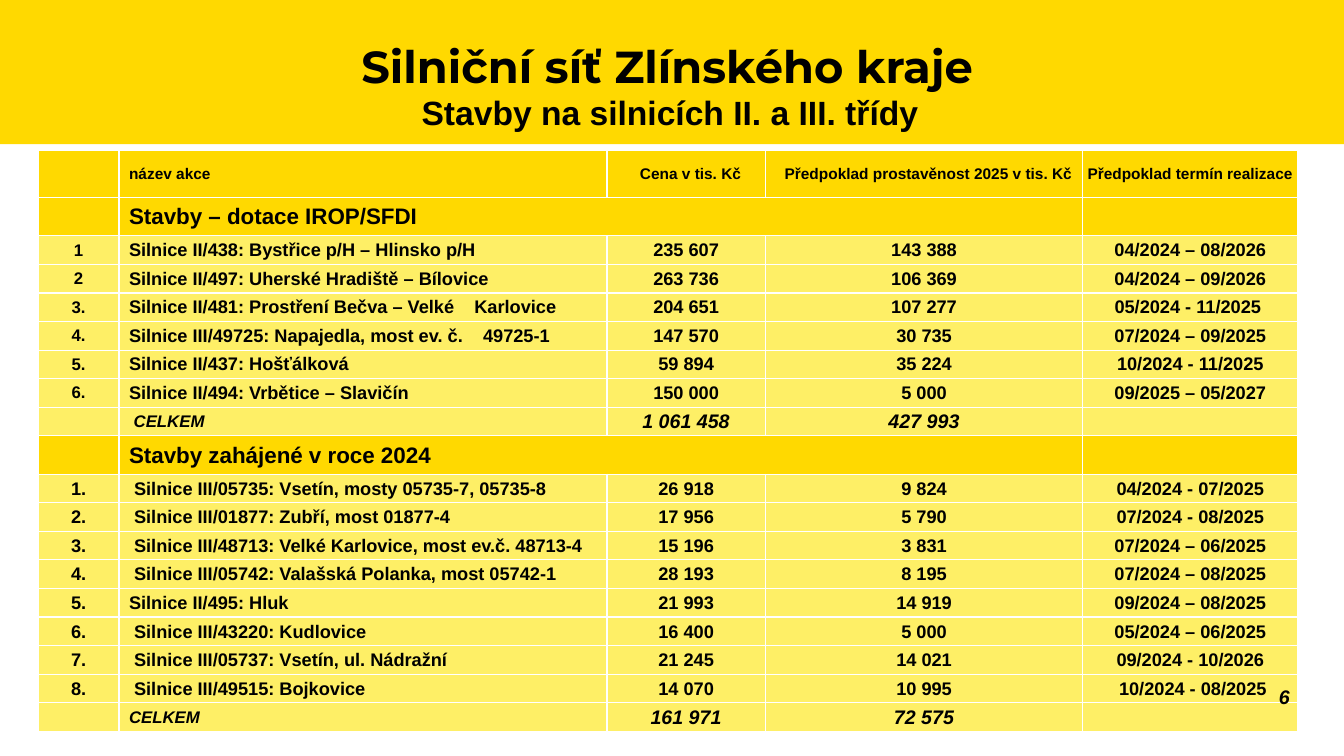
from lxml import etree
from pptx import Presentation
from pptx.dml.color import RGBColor
from pptx.enum.shapes import MSO_SHAPE
from pptx.enum.text import MSO_ANCHOR, PP_ALIGN
from pptx.oxml.ns import qn
from pptx.util import Inches, Pt

LEFT, CENTER, RIGHT = PP_ALIGN.LEFT, PP_ALIGN.CENTER, PP_ALIGN.RIGHT
TOP, MIDDLE, BOTTOM = MSO_ANCHOR.TOP, MSO_ANCHOR.MIDDLE, MSO_ANCHOR.BOTTOM
YELLOW, PALE, BLACK, WHITE = "FFD900", "FEEF66", "000000", "FFFFFF"


def rgb(value):
    return RGBColor.from_string(value)


def write(tf, text, size, font="Arial", align=CENTER, italic=False, spacing=None):
    p = tf.paragraphs[0]
    p.alignment = align
    if spacing:
        p.line_spacing = spacing
    if not text:
        etree.SubElement(p._p, qn("a:endParaRPr"), sz=str(size * 100))
        return
    r = p.add_run()
    r.text = text
    r.font.name = font
    r.font.size = Pt(size)
    r.font.bold = True
    r.font.italic = italic
    r.font.color.rgb = rgb(BLACK)


prs = Presentation()
prs.slide_width = Inches(13.33)
prs.slide_height = Inches(7.5)
s = prs.slides.add_slide(prs.slide_layouts[6])

band = s.shapes.add_shape(MSO_SHAPE.RECTANGLE, 0, 0, prs.slide_width, Inches(1.43))
band.shadow.inherit = False
band.fill.solid()
band.fill.fore_color.rgb = rgb(YELLOW)
band.line.fill.background()

rows = [
    ("header", "", "název akce", "Cena v tis. Kč",
     "Předpoklad prostavěnost 2025 v tis. Kč", "Předpoklad termín realizace"),
    ("section", "", "Stavby – dotace IROP/SFDI", "", "", ""),
    ("funded", "1", "Silnice II/438: Bystřice p/H – Hlinsko p/H", "235 607", "143 388", "04/2024 – 08/2026"),
    ("funded", "2", "Silnice II/497: Uherské Hradiště – Bílovice", "263 736", "106 369", "04/2024 – 09/2026"),
    ("funded", "3.", "Silnice II/481: Prostření Bečva – Velké    Karlovice ", "204 651", "107 277", "05/2024 - 11/2025 "),
    ("funded", "4.", "Silnice III/49725: Napajedla, most ev. č.    49725-1", "147 570", "30 735", "07/2024 – 09/2025"),
    ("funded", "5.", "Silnice II/437: Hošťálková", "59 894", "35 224", "10/2024 - 11/2025"),
    ("funded", "6.", "Silnice II/494: Vrbětice – Slavičín", "150 000", "5 000", "09/2025 – 05/2027"),
    ("total", "", " CELKEM", "1 061 458", "427 993", ""),
    ("section", "", "Stavby zahájené v roce 2024", "", "", ""),
    ("started", "1.", " Silnice III/05735: Vsetín, mosty 05735-7, 05735-8", "26 918", "9 824", "04/2024 - 07/2025"),
    ("started", "2.", " Silnice III/01877: Zubří, most 01877-4", "17 956", "5 790", "07/2024 - 08/2025"),
    ("started", "3.", " Silnice III/48713: Velké Karlovice, most ev.č. 48713-4", "15 196", "3 831", "07/2024 – 06/2025"),
    ("started", "4.", " Silnice III/05742: Valašská Polanka, most 05742-1", "28 193", "8 195", "07/2024 – 08/2025"),
    ("started", "5.", "Silnice II/495: Hluk", "21 993", "14 919", "09/2024 – 08/2025"),
    ("started", "6.", " Silnice III/43220: Kudlovice", "16 400", "5 000", "05/2024 – 06/2025"),
    ("started", "7.", " Silnice III/05737: Vsetín, ul. Nádražní", "21 245", "14 021", "09/2024 - 10/2026"),
    ("started", "8.", " Silnice III/49515: Bojkovice", "14 070", "10 995", " 10/2024 - 08/2025"),
    ("total", "", "CELKEM", "161 971", "72 575", ""),
]
sizes = {
    "header": [11] * 5,
    "section": [16] * 5,
    "funded": [12, 13, 13, 13, 13],
    "started": [13] * 5,
    "total": [12, 12, 14, 14, 12],
}
table_height = 5.77
heights = {"header": 0.47, "section": 0.38}
row_height = (table_height - 0.47 - 2 * 0.38) / (len(rows) - 3)

frame = s.shapes.add_table(len(rows), 5, Inches(0.38), Inches(1.49), Inches(12.49), Inches(table_height))
table = frame.table
table.first_row = False
table.horz_banding = False
for column, width in zip(table.columns, [0.8, 4.84, 1.57, 3.15, 2.13]):
    column.width = Inches(width)

for i, (kind, *texts) in enumerate(rows):
    table.rows[i].height = Inches(heights.get(kind, row_height))
    for j, text in enumerate(texts):
        cell = table.cell(i, j)
        indented = j == 1 or (kind == "header" and j in (2, 3))
        cell.margin_left = Inches(0.1 if indented else 0.01)
        cell.margin_right = cell.margin_top = Inches(0.01)
        cell.margin_bottom = Inches(0.01 if kind == "funded" else 0)
        cell.vertical_anchor = MIDDLE
        write(cell.text_frame, text, sizes[kind][j], align=LEFT if j == 1 else CENTER, italic=kind == "total")
        tcPr = cell._tc.get_or_add_tcPr()
        for side in ("a:lnL", "a:lnR", "a:lnT", "a:lnB"):
            border = etree.SubElement(tcPr, qn(side), w=str(Pt(1)))
            fill = etree.SubElement(border, qn("a:solidFill"))
            etree.SubElement(fill, qn("a:srgbClr"), val=WHITE)
        cell.fill.solid()
        cell.fill.fore_color.rgb = rgb(YELLOW if kind in heights else PALE)
    if kind == "section":
        table.cell(i, 1).merge(table.cell(i, 3))

labels = [
    ("6", (12.55, 6.75, 0.34, 0.33), BOTTOM, dict(size=14, align=RIGHT, italic=True)),
    ("Silniční síť Zlínského kraje", (0.46, 0.37, 12.32, 0.63), MIDDLE,
     dict(size=32, font="Montserrat", spacing=0.9)),
    ("Stavby na silnicích II. a III. třídy", (0.4, 0.91, 12.49, 0.59), TOP, dict(size=24, spacing=0.9)),
]
for text, box, anchor, style in labels:
    sp = s.shapes.add_textbox(*map(Inches, box))
    tf = sp.text_frame
    tf.word_wrap = True
    tf.vertical_anchor = anchor
    write(tf, text, **style)

prs.save("out.pptx")
